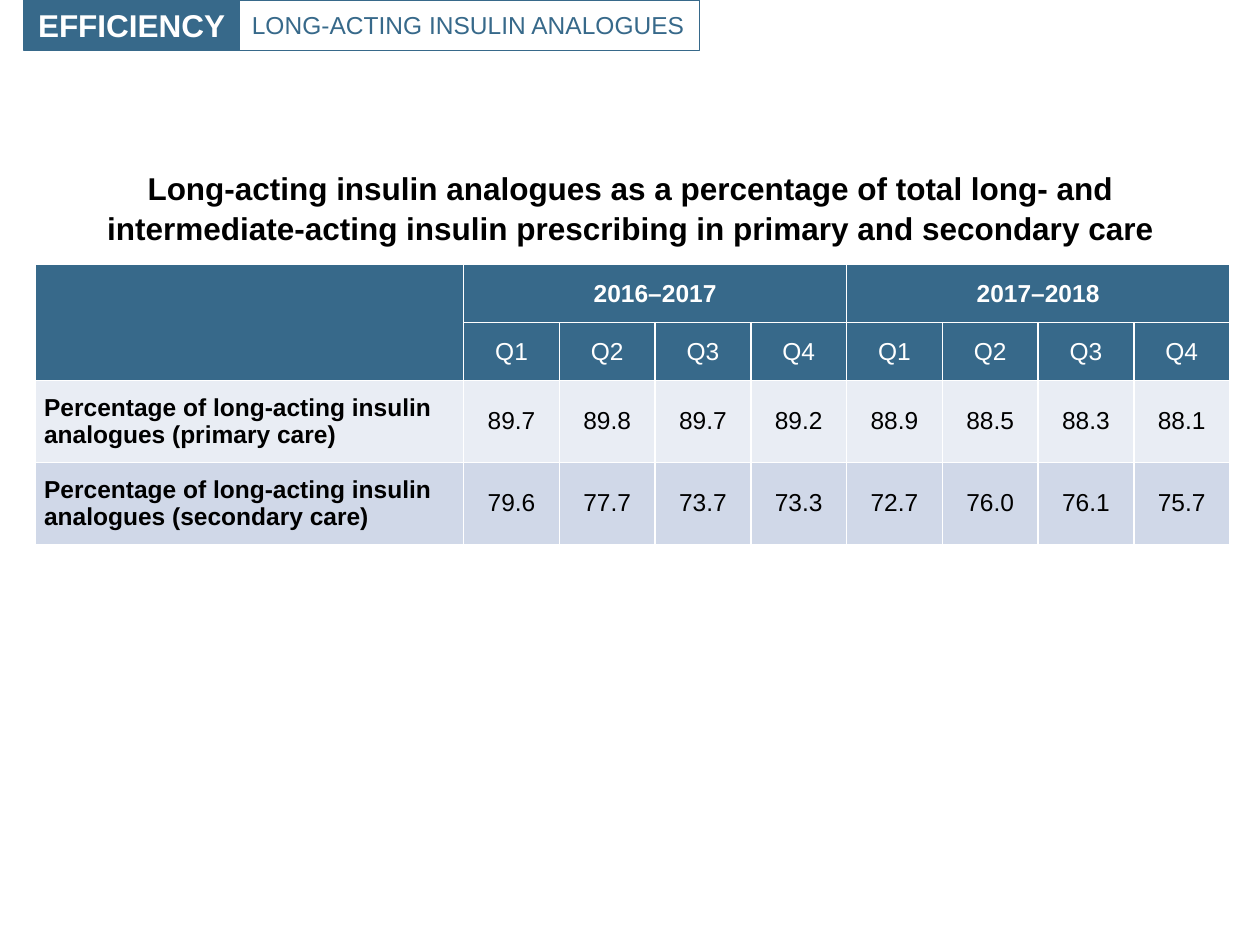
from pptx import Presentation
from pptx.dml.color import RGBColor
from pptx.enum.shapes import MSO_SHAPE as Shape
from pptx.enum.text import MSO_ANCHOR as Anchor, PP_ALIGN as Align
from pptx.oxml.ns import qn
from pptx.util import Inches, Pt
from lxml.etree import SubElement

BLUE, WHITE, BLACK = "37698A", "FFFFFF", "000000"
BANDS = ["E9EDF4", "D0D8E8"]
YEARS = ["2016–2017", "2017–2018"]
QUARTERS = ["Q1", "Q2", "Q3", "Q4"]
MEASURES = [
    ("Percentage of long-acting insulin analogues (primary care)",
     ["89.7", "89.8", "89.7", "89.2", "88.9", "88.5", "88.3", "88.1"]),
    ("Percentage of long-acting insulin analogues (secondary care)",
     ["79.6", "77.7", "73.7", "73.3", "72.7", "76.0", "76.1", "75.7"]),
]


def rgb(color):
    return RGBColor.from_string(color)


def write(frame, text, size, color, bold=False, align=Align.CENTER):
    frame.text = text
    paragraph = frame.paragraphs[0]
    paragraph.alignment = align
    font = paragraph.runs[0].font
    font.name, font.size, font.bold = "Arial", Pt(size), bold
    font.color.rgb = rgb(color)


def add_tag(slide, box, text, size, color, fill=None, bold=False, align=Align.CENTER):
    tag = slide.shapes.add_shape(Shape.RECTANGLE, *map(Inches, box))
    tag.shadow.inherit = False
    if fill:
        tag.fill.solid()
        tag.fill.fore_color.rgb = rgb(fill)
    else:
        tag.fill.background()
    tag.line.color.rgb = rgb(BLUE)
    tag.line.width = Pt(0.75)
    tag.text_frame.vertical_anchor = Anchor.MIDDLE
    write(tag.text_frame, text, size, color, bold, align)


def add_header(slide, left, top, height):
    domain_width, topic_width = 1.71, 3.65
    add_tag(slide, (left, top, domain_width, height), "EFFICIENCY", 18, WHITE,
            fill=BLUE, bold=True)
    add_tag(slide, (left + domain_width, top, topic_width, height),
            "LONG-ACTING INSULIN ANALOGUES", 14, BLUE, align=Align.LEFT)


def add_title(slide, box):
    frame = slide.shapes.add_textbox(*map(Inches, box)).text_frame
    frame.word_wrap = True
    write(frame, "Long-acting insulin analogues as a percentage of total long- and "
          "intermediate-acting insulin prescribing in primary and secondary care",
          18, BLACK, bold=True)
    frame.paragraphs[0].line_spacing = 1.05


def style_cell(cell, fill):
    cell.margin_left = cell.margin_right = Inches(0.07)
    cell.margin_top = cell.margin_bottom = Inches(0.02)
    cell.vertical_anchor = Anchor.MIDDLE
    properties = cell._tc.get_or_add_tcPr()
    for side in ("a:lnL", "a:lnR", "a:lnT", "a:lnB"):
        border = SubElement(properties, qn(side), w=str(Pt(1)))
        SubElement(SubElement(border, qn("a:solidFill")), qn("a:srgbClr"), val=WHITE)
    cell.fill.solid()
    cell.fill.fore_color.rgb = rgb(fill)


def add_percentages(slide, box):
    row_heights = [0.46, 0.46, 0.65, 0.65]
    column_widths = [3.4] + [0.76] * 8
    table = slide.shapes.add_table(len(row_heights), len(column_widths),
                                   *map(Inches, box)).table
    for row, height in zip(table.rows, row_heights):
        row.height = Inches(height)
    for column, width in zip(table.columns, column_widths):
        column.width = Inches(width)
    for row, fill in enumerate([BLUE, BLUE] + BANDS):
        for column in range(len(column_widths)):
            style_cell(table.cell(row, column), fill)

    # Two header rows: years above quarters
    table.cell(0, 0).merge(table.cell(1, 0))
    for index, year in enumerate(YEARS):
        first = 1 + index * len(QUARTERS)
        table.cell(0, first).merge(table.cell(0, first + len(QUARTERS) - 1))
        write(table.cell(0, first).text_frame, year, 14, WHITE, bold=True)
        for offset, quarter in enumerate(QUARTERS):
            write(table.cell(1, first + offset).text_frame, quarter, 14, WHITE)

    # One row for each care setting
    for row, (measure, values) in enumerate(MEASURES, start=2):
        write(table.cell(row, 0).text_frame, measure, 14, BLACK, True, Align.LEFT)
        for column, value in enumerate(values, start=1):
            write(table.cell(row, column).text_frame, value, 14, BLACK)


def main():
    deck = Presentation()
    deck.slide_width, deck.slide_height = Inches(10), Inches(7.5)
    slide = deck.slides.add_slide(deck.slide_layouts[6])
    add_title(slide, (0.74, 1.28, 8.53, 1.32))
    add_percentages(slide, (0.28, 2.1, 9.47, 2.22))
    add_header(slide, 0.19, 0, 0.4)
    deck.save("out.pptx")


if __name__ == "__main__":
    main()
